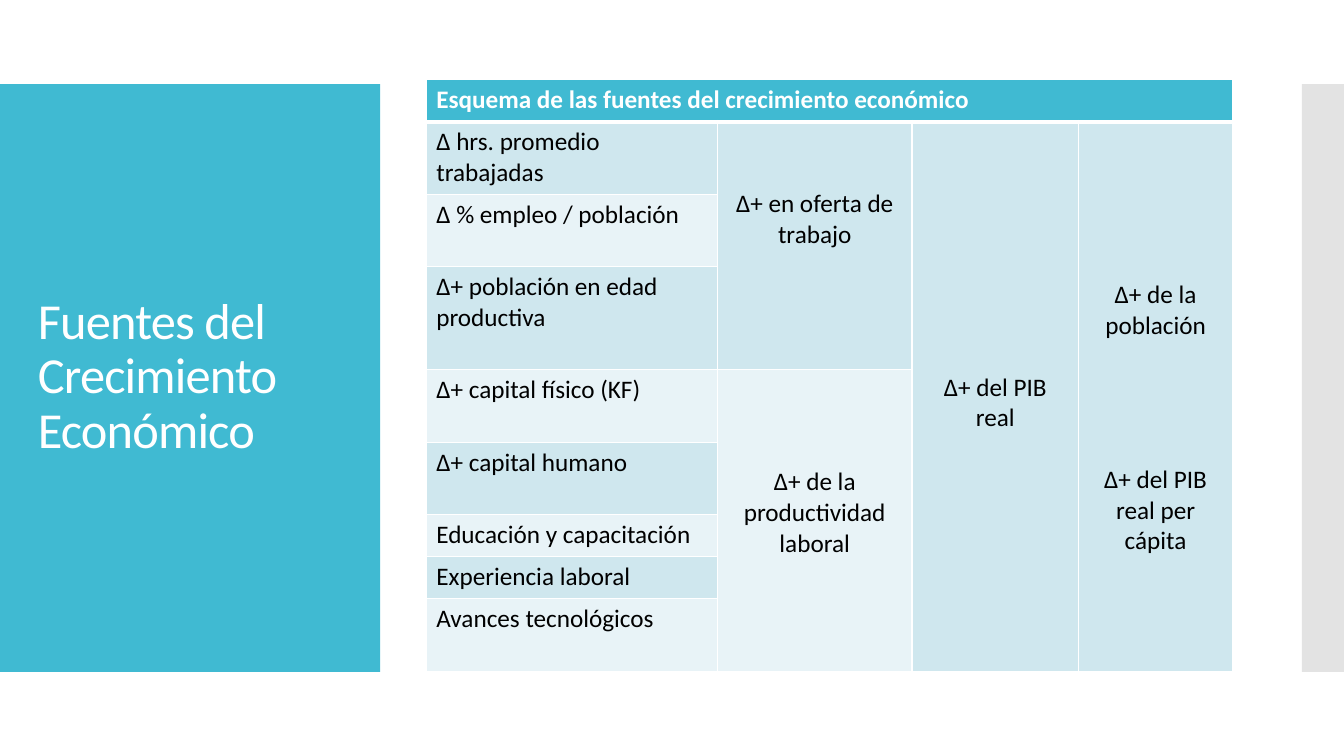
from dataclasses import dataclass

import pptx
import pptx.dml.color
import pptx.enum.shapes
import pptx.enum.text
import pptx.oxml
import pptx.oxml.ns
import pptx.util
from lxml import etree

Pt = pptx.util.Pt
ALIGN = pptx.enum.text.PP_ALIGN
MIDDLE = pptx.enum.text.MSO_ANCHOR.MIDDLE

HUES = {
    "teal": "40BAD2",
    "gray": "C8C8C8",
    "dark": "CFE7EE",
    "light": "E8F3F7",
    "white": "FFFFFF",
    "black": "000000",
}
FONT = "Calibri"
COLS = [208, 139, 119, 110]
ROWS = [30, 51.8, 51.8, 73.6, 51.8, 51.8, 30, 30, 51.8]
PAD = 3.6
LINE = 22

HEAD = "Esquema de las fuentes del crecimiento económico"
CAUSES = [
    "∆ hrs. promedio trabajadas",
    "∆ % empleo / población",
    "∆+ población en edad productiva",
    "∆+ capital físico (KF)",
    "∆+ capital humano",
    "Educación y capacitación",
    "Experiencia laboral",
    "Avances tecnológicos",
]


@dataclass
class Bar:
    left: float
    width: float
    hue: str
    alpha: int = 100


@dataclass
class Effect:
    """A tall cell; the extra margins move its text off the middle."""
    row: int
    col: int
    span: int
    hue: str
    text: str
    above: float = 0
    below: float = 0


BARS = [Bar(0, 271.5, "teal"), Bar(930, 30, "gray", 50)]
EFFECTS = [
    Effect(1, 1, 3, "dark", "∆+ en oferta de trabajo", below=38),
    Effect(4, 1, 5, "light", "∆+ de la productividad laboral", below=11),
    Effect(1, 2, 8, "dark", "∆+ del PIB real", above=9),
    Effect(1, 3, 8, "dark", "∆+ de la población\n∆+ del PIB real per cápita",
           above=31),
]


def color(hue: str) -> pptx.dml.color.RGBColor:
    return pptx.dml.color.RGBColor.from_string(HUES[hue])


def style(frame, size: float, hue: str, bold: bool = False) -> None:
    for para in frame.paragraphs:
        for run in para.runs:
            run.font.name = FONT
            run.font.size = Pt(size)
            run.font.bold = bold
            run.font.color.rgb = color(hue)


def paint(cell, hue: str) -> None:
    cell.fill.solid()
    cell.fill.fore_color.rgb = color(hue)


def edge(cell, foot: float) -> None:
    """Give the cell white borders, the lower one `foot` points wide."""
    props = cell._tc.get_or_add_tcPr()
    for side, width in (("L", 1), ("R", 1), ("T", 1), ("B", foot)):
        props.append(pptx.oxml.parse_xml(
            f'<a:ln{side} {pptx.oxml.ns.nsdecls("a")} w="{Pt(width)}">'
            f'<a:solidFill><a:srgbClr val="{HUES["white"]}"/></a:solidFill>'
            f'</a:ln{side}>'))


def add_bar(slide, bar: Bar) -> None:
    rect = pptx.enum.shapes.MSO_SHAPE.RECTANGLE
    shape = slide.shapes.add_shape(
        rect, Pt(bar.left), Pt(60), Pt(bar.width), Pt(420))
    shape.shadow.inherit = False
    shape.line.fill.background()
    shape.fill.solid()
    shape.fill.fore_color.rgb = color(bar.hue)
    if bar.alpha < 100:
        tag = pptx.oxml.ns.qn("a:srgbClr")
        tint = next(shape._element.spPr.iter(tag))
        etree.SubElement(tint, pptx.oxml.ns.qn("a:alpha"),
                         val=str(bar.alpha * 1000))


def add_title(slide) -> None:
    box = slide.shapes.add_textbox(Pt(20), Pt(88.5), Pt(232), Pt(362))
    frame = box.text_frame
    frame.word_wrap = True
    frame.vertical_anchor = MIDDLE
    frame.text = "Fuentes del Crecimiento Económico"
    para = frame.paragraphs[0]
    para.line_spacing = 0.9
    style(frame, 36, "white")
    para.runs[0]._r.get_or_add_rPr().set("spc", "-60")


def add_effect(table, effect: Effect) -> None:
    cell = table.cell(effect.row, effect.col)
    cell.merge(table.cell(effect.row + effect.span - 1, effect.col))
    paint(cell, effect.hue)
    cell.vertical_anchor = MIDDLE
    cell.margin_top = Pt(PAD + effect.above)
    cell.margin_bottom = Pt(PAD + effect.below)
    frame = cell.text_frame
    frame.text = effect.text
    for para in frame.paragraphs:
        para.alignment = ALIGN.CENTER
    for para in frame.paragraphs[1:]:
        para.space_before = Pt(4 * LINE)
    style(frame, 18, "black")


def add_grid(slide) -> None:
    frame = slide.shapes.add_table(
        len(ROWS), len(COLS), Pt(304.5), Pt(57), Pt(sum(COLS)), Pt(sum(ROWS)))
    table = frame.table
    table.horz_banding = False
    for col, width in zip(table.columns, COLS):
        col.width = Pt(width)
    for row, height in zip(table.rows, ROWS):
        row.height = Pt(height)
    for num, row in enumerate(table.rows):
        for cell in row.cells:
            edge(cell, 1 if num else 3)
            paint(cell, ("dark" if num % 2 else "light") if num else "teal")

    head = table.cell(0, 0)
    head.merge(table.cell(0, len(COLS) - 1))
    head.text_frame.text = HEAD
    style(head.text_frame, 18, "white", True)
    for num, cause in enumerate(CAUSES, 1):
        text = table.cell(num, 0).text_frame
        text.text = cause
        style(text, 18, "black")
    for effect in EFFECTS:
        add_effect(table, effect)


def main() -> None:
    deck = pptx.Presentation()
    deck.slide_width, deck.slide_height = Pt(960), Pt(540)
    slide = deck.slides.add_slide(deck.slide_layouts[6])
    for bar in BARS:
        add_bar(slide, bar)
    add_title(slide)
    add_grid(slide)
    deck.save("out.pptx")


if __name__ == "__main__":
    main()
